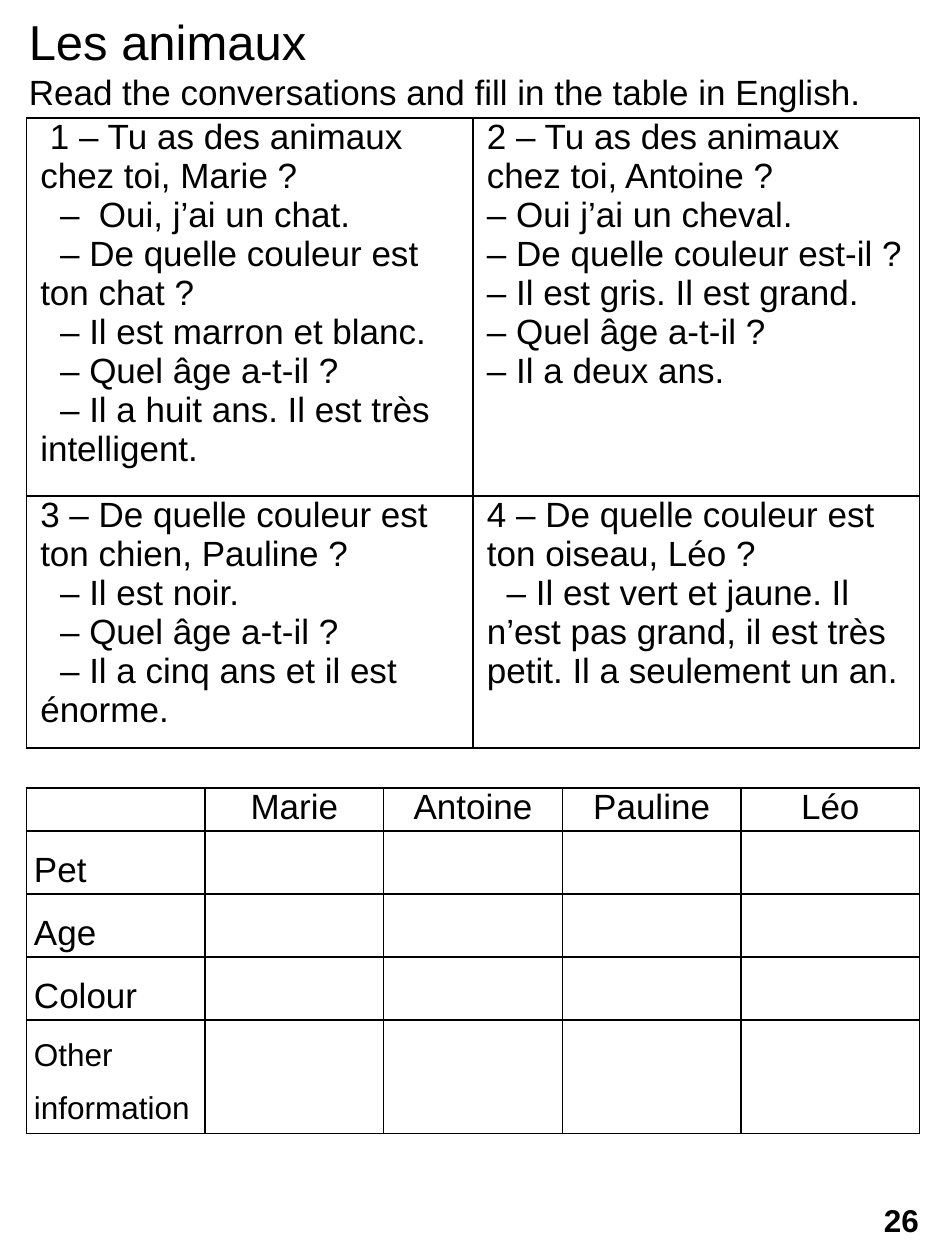
from dataclasses import dataclass

from lxml.etree import SubElement
from pptx import Presentation
from pptx.dml.color import RGBColor
from pptx.enum.shapes import MSO_SHAPE as Shape
from pptx.enum.text import MSO_ANCHOR as Anchor, PP_ALIGN as Align
from pptx.oxml.ns import qn
from pptx.util import Inches, Pt

TITLE = "Les animaux "
TASK = "Read the conversations and fill in the table in English."
PAGE = "26"

# Lines that start with " –" have an indented first line.
TALKS = [
    [
        [" 1 – Tu as des animaux chez toi, Marie ?",
         " –  Oui, j’ai un chat.",
         " – De quelle couleur est ton chat ?",
         " – Il est marron et blanc.",
         " – Quel âge a-t-il ?",
         " – Il a huit ans. Il est très intelligent."],
        ["2 – Tu as des animaux chez toi, Antoine ?",
         "– Oui j’ai un cheval.",
         "– De quelle couleur est-il ? – Il est gris. Il est grand.",
         "– Quel âge a-t-il ?",
         "– Il a deux ans."],
    ],
    [
        ["3 – De quelle couleur est ton chien, Pauline ?",
         " – Il est noir.",
         " – Quel âge a-t-il ?",
         " – Il a cinq ans et il est énorme."],
        ["4 – De quelle couleur est ton oiseau, Léo ?",
         " – Il est vert et jaune. Il n’est pas grand, il est très petit. "
         "Il a seulement un an."],
    ],
]
NAMES = ["Marie", "Antoine", "Pauline", "Léo"]
TOPICS = ["Pet", "Age", "Colour", "Other information"]


@dataclass
class Theme:
    font: str = "Arial"
    ink: RGBColor = RGBColor(0, 0, 0)
    head: int = 28
    body: int = 20
    small: int = 18
    rule: int = 1


THEME = Theme()
WIDE, HIGH = 7.5, 10
LEFT, SPAN = 0.21, 7.09
TALK_TOP, TALK_ROWS = 0.935, [3, 2]
FORM_TOP, FORM_ROWS = 6.255, [0.34, 0.5, 0.5, 0.5, 0.9]


def style(run, size, bold=False):
    font = run.font
    font.name, font.size, font.bold = THEME.font, Pt(size), bold
    font.color.rgb = THEME.ink


def border(cell):
    props = cell._tc.get_or_add_tcPr()
    for i, side in enumerate("LRTB"):
        line = SubElement(props, qn(f"a:ln{side}"), w=str(Pt(THEME.rule)))
        fill = SubElement(line, qn("a:solidFill"))
        SubElement(fill, qn("a:srgbClr"), val=str(THEME.ink))
        props.insert(i, line)


def add_grid(slide, top, rows, cols, pad):
    """Add a plain ruled table with equal columns."""
    frame = slide.shapes.add_table(
        len(rows), cols, Inches(LEFT), Inches(top),
        Inches(SPAN), Inches(sum(rows)))
    table = frame.table
    table.first_row = table.horz_banding = False
    for col in table.columns:
        col.width = Inches(SPAN / cols)
    for row, size in zip(table.rows, rows):
        row.height = Inches(size)
    for cell in table.iter_cells():
        cell.fill.background()
        cell.margin_left = cell.margin_right = Inches(pad)
        cell.margin_top = cell.margin_bottom = 0
        border(cell)
    return table


def add_talks(slide):
    table = add_grid(slide, TALK_TOP, TALK_ROWS, 2, 0.07)
    for r, row in enumerate(TALKS):
        for c, lines in enumerate(row):
            frame = table.cell(r, c).text_frame
            frame.text = "\n".join(lines)
            for para, line in zip(frame.paragraphs, lines):
                props = para._p.get_or_add_pPr()
                props.set("marL", str(Inches(0.04)))
                indent = 0.08 if line.startswith(" –") else 0
                props.set("indent", str(Inches(indent)))
                style(para.runs[0], THEME.body)


def add_form(slide):
    table = add_grid(slide, FORM_TOP, FORM_ROWS, len(NAMES) + 1, 0.06)
    for c, name in enumerate(NAMES, 1):
        para = table.cell(0, c).text_frame.paragraphs[0]
        para.text, para.alignment = name, Align.CENTER
        style(para.runs[0], THEME.body)
    for r, topic in enumerate(TOPICS, 1):
        para = table.cell(r, 0).text_frame.paragraphs[0]
        para.text, para.line_spacing = topic, 1.5
        style(para.runs[0], THEME.small if " " in topic else THEME.body)


def add_title(slide):
    box = slide.shapes.add_textbox(
        Inches(0.13), Inches(0.04), Inches(7.22), Inches(0.9))
    frame = box.text_frame
    frame.word_wrap = True
    para = frame.paragraphs[0]
    para.text = f"{TITLE}\v{TASK}"
    for run, size in zip(para.runs, (THEME.head, THEME.body)):
        style(run, size)


def add_page(slide):
    tag = slide.shapes.add_shape(
        Shape.ROUNDED_RECTANGLE, Inches(6.88), Inches(9.45),
        Inches(0.55), Inches(0.47))
    tag.shadow.inherit = False
    tag.fill.background()
    tag.line.fill.background()
    frame = tag.text_frame
    frame.text, frame.vertical_anchor = PAGE, Anchor.MIDDLE
    para = frame.paragraphs[0]
    para.alignment = Align.CENTER
    style(para.runs[0], THEME.small, bold=True)


def main():
    deck = Presentation()
    deck.slide_width, deck.slide_height = Inches(WIDE), Inches(HIGH)
    slide = deck.slides.add_slide(deck.slide_layouts[6])
    for add in (add_talks, add_form, add_title, add_page):
        add(slide)
    deck.save("out.pptx")


if __name__ == "__main__":
    main()
